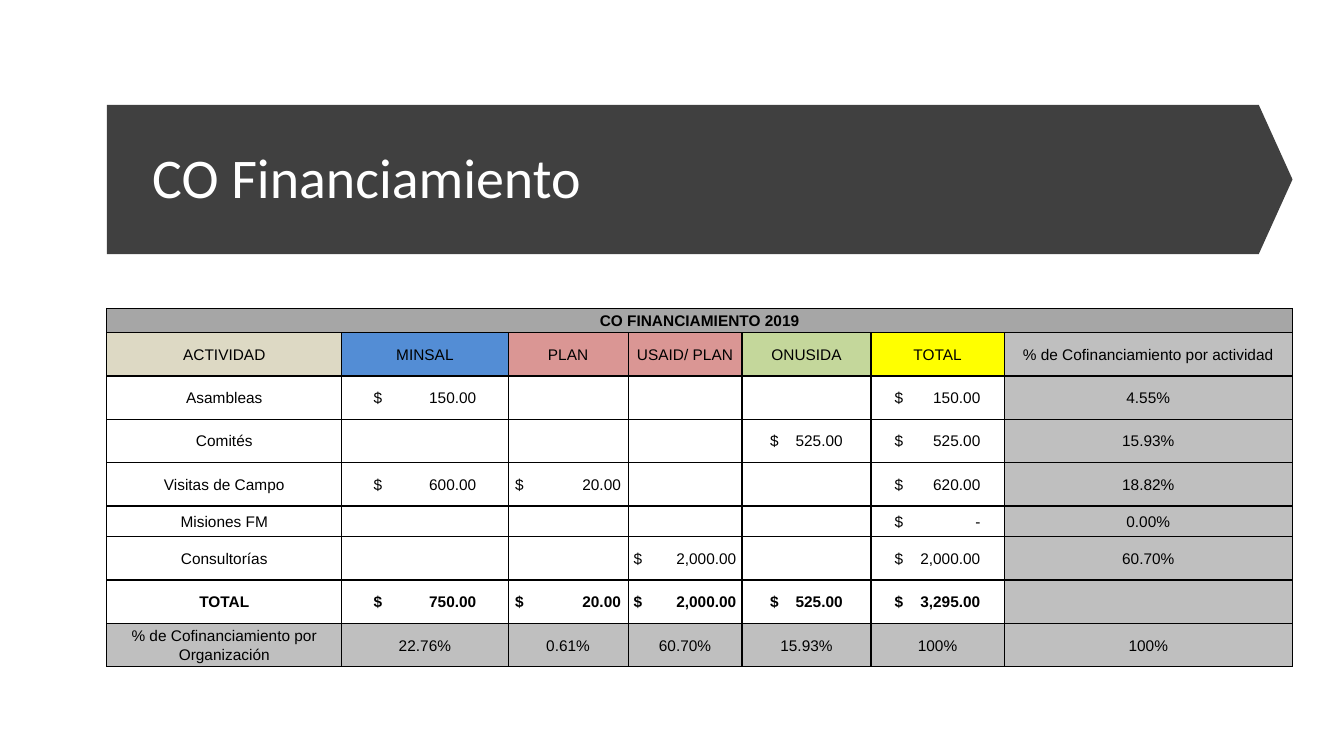
from dataclasses import dataclass

from lxml.etree import SubElement
from pptx import Presentation
from pptx.dml.color import RGBColor
from pptx.enum.shapes import MSO_SHAPE as Shape
from pptx.enum.text import MSO_ANCHOR as Anchor, PP_ALIGN as Align
from pptx.oxml.ns import qn
from pptx.util import Inches, Pt

TITLE = "CO Financiamiento"
TABLE_TITLE = "CO FINANCIAMIENTO 2019"
HEADERS = [
    ("ACTIVIDAD", "DDD9C4"),
    ("MINSAL", "538DD5"),
    ("PLAN", "DA9694"),
    ("USAID/ PLAN", "DA9694"),
    ("ONUSIDA", "C4D79B"),
    ("TOTAL", "FFFF00"),
    ("% de Cofinanciamiento por actividad", "BFBFBF"),
]
BODY = [
    ("Asambleas", "150.00", "", "", "", "150.00", "4.55%"),
    ("Comités", "", "", "", "525.00", "525.00", "15.93%"),
    ("Visitas de Campo", "600.00", "20.00", "", "", "620.00", "18.82%"),
    ("Misiones FM", "", "", "", "", "-", "0.00%"),
    ("Consultorías", "", "", "2,000.00", "", "2,000.00", "60.70%"),
    ("TOTAL", "750.00", "20.00", "2,000.00", "525.00", "3,295.00", ""),
]
SHARES = ("% de Cofinanciamiento por Organización",
          "22.76%", "0.61%", "60.70%", "15.93%", "100%", "100%")

COLUMN_WIDTHS = [2.33, 1.65, 1.19, 1.13, 1.28, 1.32, 2.86]
ROW_HEIGHTS = [0.24, 0.43, 0.43, 0.43, 0.43, 0.3, 0.43, 0.43, 0.43]
AMOUNT_WIDTHS = {1: 1.02, 2: 1.05, 3: 1.02, 4: 0.72, 5: 0.85}
LEFT, WIDTH = 1.06, 11.76
BANNER_TOP, BANNER_HEIGHT, TABLE_TOP = 1.04, 1.48, 3.06


@dataclass(frozen=True)
class Theme:
    banner: str = "404040"
    title_text: str = "FFFFFF"
    text: str = "000000"
    table_title: str = "A6A6A6"
    share: str = "BFBFBF"
    title_font: str = "Calibri"
    table_font: str = "Arial"
    title_size: int = 40
    table_size: int = 11
    border_width: int = 1


theme = Theme()


def format_paragraph(paragraph, font_name, size, color, bold, spacing):
    paragraph.line_spacing = spacing
    for run in paragraph.runs:
        font = run.font
        font.name, font.size, font.bold = font_name, Pt(size), bold
        font.color.rgb = RGBColor.from_string(color)


def add_borders(cell):
    properties = cell._tc.get_or_add_tcPr()
    for side in ("a:lnL", "a:lnR", "a:lnT", "a:lnB"):
        line = SubElement(properties, qn(side), w=str(Pt(theme.border_width)))
        fill = SubElement(line, qn("a:solidFill"))
        SubElement(fill, qn("a:srgbClr"), val=theme.text)


def add_right_tab(paragraph, position):
    properties = paragraph._p.get_or_add_pPr()
    tabs = SubElement(properties, qn("a:tabLst"))
    SubElement(tabs, qn("a:tab"), pos=str(Inches(position)), algn="r")


def fill_cell(cell, text, color=None, bold=False, column=None):
    add_borders(cell)
    if color:
        cell.fill.solid()
        cell.fill.fore_color.rgb = RGBColor.from_string(color)
    else:
        cell.fill.background()
    cell.vertical_anchor = Anchor.MIDDLE
    cell.margin_top = cell.margin_bottom = 0
    cell.margin_left = cell.margin_right = Inches(0.05)
    paragraph = cell.text_frame.paragraphs[0]
    is_amount = bool(text) and column in AMOUNT_WIDTHS
    paragraph.text = f"$\t{text}" if is_amount else text
    paragraph.alignment = Align.LEFT if is_amount else Align.CENTER
    format_paragraph(paragraph, theme.table_font, theme.table_size, theme.text, bold, 1.07)
    if is_amount:
        amount_width = AMOUNT_WIDTHS[column]
        cell.margin_left = Inches((COLUMN_WIDTHS[column] - amount_width) / 2)
        cell.margin_right = 0
        add_right_tab(paragraph, amount_width)


def add_banner(slide):
    banner = slide.shapes.add_shape(
        Shape.PENTAGON, Inches(LEFT), Inches(BANNER_TOP), Inches(WIDTH), Inches(BANNER_HEIGHT))
    banner.adjustments[0] = 0.226
    banner.shadow.inherit = False
    banner.fill.solid()
    banner.fill.fore_color.rgb = RGBColor.from_string(theme.banner)
    banner.line.fill.background()
    slide.shapes._spTree.insert(2, banner._element)


def add_title(slide):
    title = slide.shapes.title
    title.left, title.top = Inches(1.41), Inches(1.32)
    title.width, title.height = Inches(10.96), Inches(0.94)
    title.text_frame.text = TITLE
    title.text_frame.vertical_anchor = Anchor.MIDDLE
    paragraph = title.text_frame.paragraphs[0]
    paragraph.alignment = Align.LEFT
    format_paragraph(paragraph, theme.title_font, theme.title_size, theme.title_text, False, 0.9)


def add_financing_table(slide):
    table = slide.shapes.add_table(
        len(ROW_HEIGHTS), len(COLUMN_WIDTHS), Inches(LEFT), Inches(TABLE_TOP),
        Inches(WIDTH), Inches(sum(ROW_HEIGHTS))).table
    table.first_row = table.horz_banding = False
    for column, width in zip(table.columns, COLUMN_WIDTHS):
        column.width = Inches(width)
    for row, height in zip(table.rows, ROW_HEIGHTS):
        row.height = Inches(height)

    last_column, last_row = len(COLUMN_WIDTHS) - 1, len(ROW_HEIGHTS) - 1
    table.cell(0, 0).merge(table.cell(0, last_column))
    for column, (header, color) in enumerate(HEADERS):
        fill_cell(table.cell(0, column), "" if column else TABLE_TITLE, theme.table_title, True)
        fill_cell(table.cell(1, column), header, color)
        fill_cell(table.cell(last_row, column), SHARES[column], theme.share)
    for row, values in enumerate(BODY, start=2):
        for column, value in enumerate(values):
            color = theme.share if column == last_column else None
            fill_cell(table.cell(row, column), value, color, values[0] == "TOTAL", column)


def main():
    presentation = Presentation()
    presentation.slide_width, presentation.slide_height = Inches(13.33), Inches(7.5)
    slide = presentation.slides.add_slide(presentation.slide_layouts[5])
    add_banner(slide)
    add_title(slide)
    add_financing_table(slide)
    presentation.save("out.pptx")


if __name__ == "__main__":
    main()
